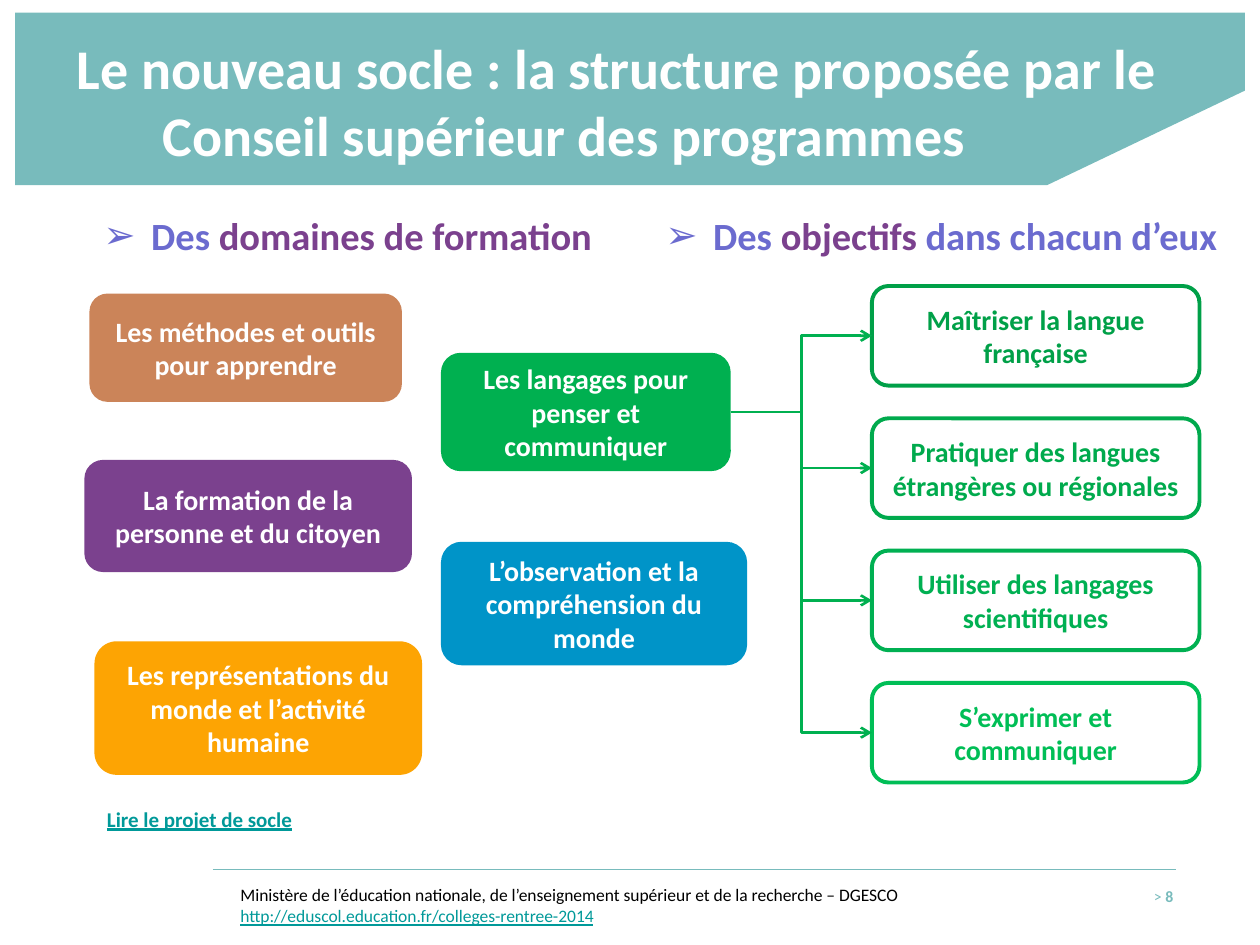
from dataclasses import dataclass

import lxml.etree
import pptx
import pptx.dml.color
import pptx.enum.shapes
import pptx.enum.text
import pptx.oxml.ns
import pptx.util

Inches = pptx.util.Inches
Pt = pptx.util.Pt
Align = pptx.enum.text.PP_ALIGN
Anchor = pptx.enum.text.MSO_ANCHOR
Connector = pptx.enum.shapes.MSO_CONNECTOR
qn = pptx.oxml.ns.qn


@dataclass(frozen=True)
class Theme:
    font: str = "Calibri"
    teal: str = "78BBBC"
    white: str = "FFFFFF"
    black: str = "000000"
    lilac: str = "6B6BCF"
    purple: str = "7B418E"
    green: str = "00B050"
    link: str = "009999"
    title_size: int = 32
    heading_size: int = 22
    box_size: int = 16
    link_size: int = 12
    footer_size: int = 10
    number_size: int = 9


@dataclass(frozen=True)
class Card:
    text: str
    left: float
    top: float
    width: float
    height: float
    color: str
    filled: bool = True


THEME = Theme()

DOMAINS = [
    Card("L’observation et la compréhension du monde", 3.5, 4.3, 2.43, 0.98, "0094C8"),
    Card("La formation de la personne et du citoyen", 0.67, 3.65, 2.6, 0.89, THEME.purple),
    Card("Les méthodes et outils pour apprendre", 0.71, 2.33, 2.48, 0.86, "CB8459"),
    Card("Les représentations du monde et l’activité humaine", 0.75, 5.09, 2.6, 1.06, "FDA403"),
]
LANGUAGES = Card("Les langages pour penser et communiquer", 3.5, 2.8, 2.3, 0.94, THEME.green)
OBJECTIVES = [
    ("Maîtriser la langue française", "00A048"),
    ("Pratiquer des langues étrangères ou régionales", "00AA4D"),
    ("Utiliser des langages scientifiques", "00B052"),
    ("S’exprimer et communiquer", "00BE56"),
]
OBJECTIVE_TOP, OBJECTIVE_STEP = 2.27, 1.05


def rgb(color: str):
    return pptx.dml.color.RGBColor.from_string(color)


def style(font, size: int, color: str, bold: bool = False, underline: bool = False) -> None:
    font.name = THEME.font
    font.size = Pt(size)
    font.color.rgb = rgb(color)
    font.bold = bold
    font.underline = underline


def place(shape, left: float, top: float, width: float, height: float) -> None:
    shape.left, shape.top = Inches(left), Inches(top)
    shape.width, shape.height = Inches(width), Inches(height)


def add_text_box(page, left: float, top: float, width: float, height: float):
    box = page.shapes.add_textbox(Inches(left), Inches(top), Inches(width), Inches(height))
    box.text_frame.word_wrap = True
    return box.text_frame


def set_hanging(para, indent: float) -> None:
    properties = para._p.get_or_add_pPr()
    properties.set("marL", str(Inches(indent)))
    properties.set("indent", str(-Inches(indent)))


def add_card(page, card: Card):
    shape = page.shapes.add_shape(
        pptx.enum.shapes.MSO_SHAPE.ROUNDED_RECTANGLE,
        Inches(card.left), Inches(card.top), Inches(card.width), Inches(card.height))
    shape.shadow.inherit = False
    if card.filled:
        shape.fill.solid()
        shape.fill.fore_color.rgb = rgb(card.color)
        shape.line.fill.background()
    else:
        shape.fill.background()
        shape.line.color.rgb = rgb(card.color)
        shape.line.width = Pt(2.25)
    frame = shape.text_frame
    frame.word_wrap = True
    frame.vertical_anchor = Anchor.MIDDLE
    para = frame.paragraphs[0]
    para.text = card.text
    para.alignment = Align.CENTER
    style(para.font, THEME.box_size, THEME.white if card.filled else card.color, bold=True)
    return shape


def add_line(page, kind, start: tuple, end: tuple, color: str, width: float):
    line = page.shapes.add_connector(
        kind, Inches(start[0]), Inches(start[1]), Inches(end[0]), Inches(end[1]))
    line.line.color.rgb = rgb(color)
    line.line.width = Pt(width)
    lxml.etree.SubElement(line.element.spPr, qn("a:effectLst"))
    return line


def add_arrow(page, source, target) -> None:
    arrow = add_line(page, Connector.ELBOW, (5.8, 3.27), (6.92, 3.27), THEME.green, 1.5)
    arrow.begin_connect(source, 3)
    arrow.end_connect(target, 1)
    lxml.etree.SubElement(arrow.line._get_or_add_ln(), qn("a:tailEnd"), type="arrow")


def fill_heading(holder, left: float, width: float, wrap: bool, spans: list) -> None:
    place(holder, left, 1.63, width, 0.47)
    frame = holder.text_frame
    frame.word_wrap = wrap
    frame.auto_size = pptx.enum.text.MSO_AUTO_SIZE.SHAPE_TO_FIT_TEXT
    para = frame.paragraphs[0]
    set_hanging(para, 0.38)
    lxml.etree.SubElement(para._p.get_or_add_pPr(), qn("a:buChar"), char="➢")
    para.space_before = Pt(0)
    for text, color in spans:
        span = para.add_run()
        span.text = text
        style(span.font, THEME.heading_size, color, bold=True)


def add_banner(page, title) -> None:
    builder = page.shapes.build_freeform(Inches(9.88), Inches(0.1))
    corners = [(0.12, 0.1), (0.12, 1.47), (8.31, 1.47), (9.88, 0.72)]
    builder.add_line_segments([(Inches(x), Inches(y)) for x, y in corners], close=True)
    banner = builder.convert_to_shape()
    banner.shadow.inherit = False
    banner.fill.solid()
    banner.fill.fore_color.rgb = rgb(THEME.teal)
    banner.line.fill.background()
    rule = add_line(page, Connector.STRAIGHT, (1.69, 6.9), (9.33, 6.9), THEME.teal, 0.75)
    for shape in (banner, rule):
        title.element.addprevious(shape.element)

    # Title text
    place(title, 0.51, 0.13, 8.99, 1.34)
    frame = title.text_frame
    frame.auto_size = pptx.enum.text.MSO_AUTO_SIZE.NONE
    frame.vertical_anchor = Anchor.MIDDLE
    para = frame.paragraphs[0]
    para.text = "Le nouveau socle : la structure proposée par le Conseil supérieur des programmes"
    para.alignment = Align.LEFT
    set_hanging(para, 0.68)
    style(para.font, THEME.title_size, THEME.white, bold=True)


def add_footer(page) -> None:
    para = add_text_box(page, 8.39, 6.99, 1.02, 0.5).paragraphs[0]
    para.alignment = Align.RIGHT
    for text, bold in (("> ", False), ("8", True)):
        span = para.add_run()
        span.text = text
        style(span.font, THEME.number_size, THEME.teal, bold=bold)

    para = add_text_box(page, 0.75, 6.35, 5.75, 0.3).paragraphs[0]
    para.text = "Lire le projet de socle"
    style(para.font, THEME.link_size, THEME.link, bold=True, underline=True)

    frame = add_text_box(page, 1.81, 6.97, 6.66, 0.32)
    ministry, address = frame.paragraphs[0], frame.add_paragraph()
    ministry.text = ("Ministère de l’éducation nationale, de l’enseignement supérieur "
                     "et de la recherche – DGESCO")
    style(ministry.font, THEME.footer_size, THEME.black)
    address.text = "http://eduscol.education.fr/colleges-rentree-2014"
    style(address.font, THEME.footer_size, THEME.link, underline=True)


def main() -> None:
    deck = pptx.Presentation()
    deck.slide_width, deck.slide_height = Inches(10), Inches(7.5)
    page = deck.slides.add_slide(deck.slide_layouts.get_by_name("Two Content"))
    title, left_body, right_body = page.placeholders

    # Banner, title and column headings
    add_banner(page, title)
    fill_heading(left_body, 0.72, 4.32, True,
                 [("Des ", THEME.lilac), ("domaines de formation", THEME.purple)])
    fill_heading(right_body, 5.18, 4.63, False,
                 [("Des ", THEME.lilac), ("objectifs ", THEME.purple),
                  ("dans chacun d’eux", THEME.lilac)])

    # Domains, and the objectives of one of them
    for domain in DOMAINS:
        add_card(page, domain)
    languages = add_card(page, LANGUAGES)
    objectives = [
        add_card(page, Card(text, 6.92, OBJECTIVE_TOP + row * OBJECTIVE_STEP,
                            2.6, 0.79, color, filled=False))
        for row, (text, color) in enumerate(OBJECTIVES)
    ]
    for objective in objectives:
        add_arrow(page, languages, objective)

    add_footer(page)
    deck.save("out.pptx")


if __name__ == "__main__":
    main()
